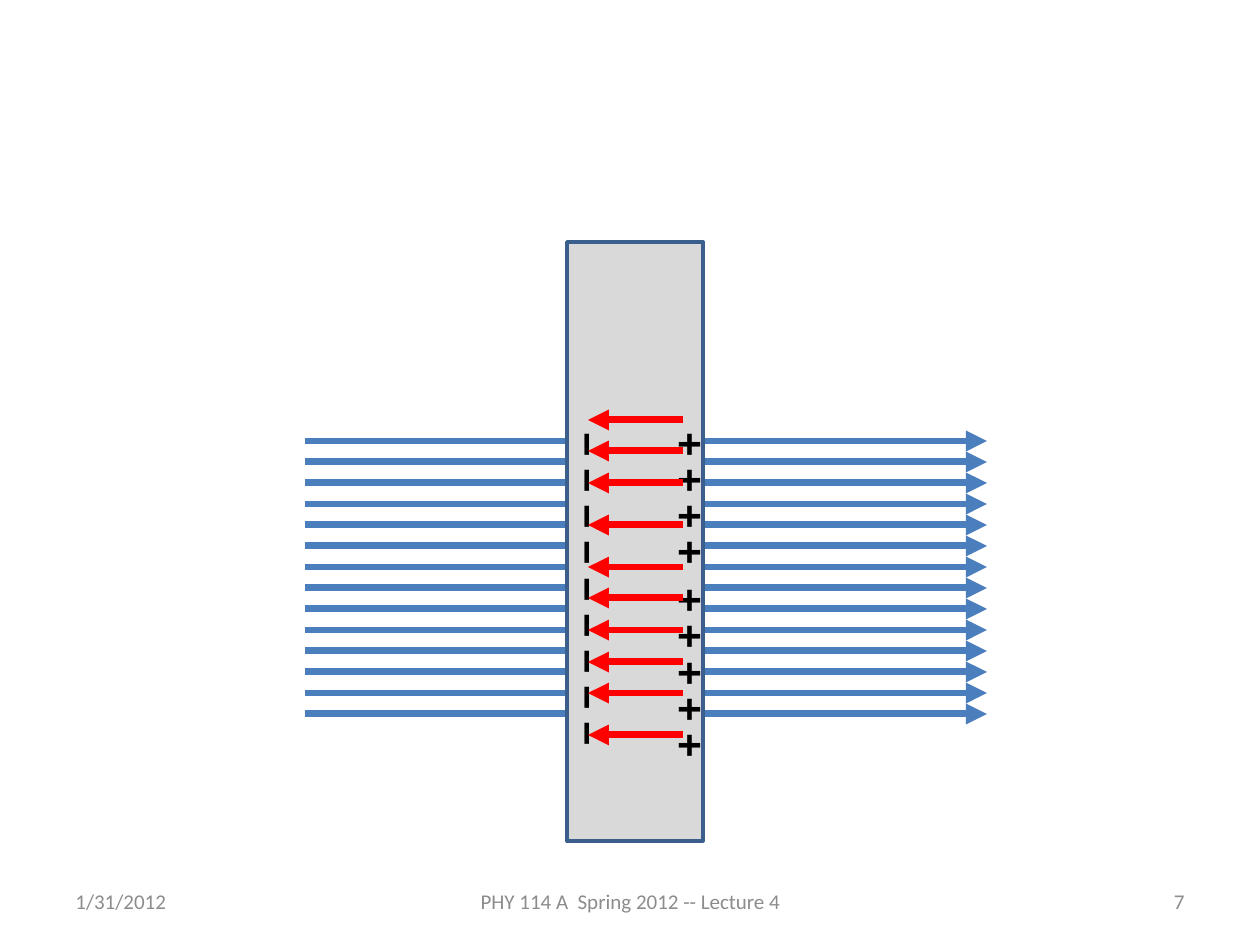
from lxml import etree
from pptx import Presentation
from pptx import util as u
from pptx.dml.color import RGBColor
from pptx.enum import shapes, text
from pptx.oxml.ns import qn

ALIGN = text.PP_ALIGN
FOOTERS = [  # wording, left, width, alignment
    ("1/31/2012", 63, 294, ALIGN.LEFT),
    ("PHY 114 A  Spring 2012 -- Lecture 4", 431, 399, ALIGN.CENTER),
    ("7", 903, 294, ALIGN.RIGHT),
]
FOOTER_TOP, FOOTER_HEIGHT = 876, 50
CHARGES = ["+ + + +  + + + + +", "− − − − − − − − −"]
CHARGES_BOX = (495, 420, 229, 368)
SLAB_BOX = (567, 242, 136, 599)

OUTER_LEFT, OUTER_RIGHT = 305, 987
OUTER_TOP, OUTER_STEP, OUTER_COUNT = 441, 21, 14
INNER_LEFT, INNER_RIGHT = 588, 683
INNER_YS = [420, 451, 483, 525, 567, 598, 630, 662, 693, 735]

BLUE = RGBColor(0x4B, 0x7E, 0xBC)
RED = RGBColor(0xFF, 0x00, 0x00)
SLAB_FILL = RGBColor(0xD9, 0xD9, 0xD9)
SLAB_EDGE = RGBColor(0x3A, 0x5F, 0x8C)
FOOTER_GREY = RGBColor(0x8C, 0x8C, 0x8C)
BLACK = RGBColor(0, 0, 0)


def px(*lengths):
    return [u.Emu(round(length * 914400 / 126)) for length in lengths]


def style(paragraph, name, size, color, bold=False):
    for run in paragraph.runs:
        run.font.name = name
        run.font.size = u.Pt(size)
        run.font.color.rgb = color
        run.font.bold = bold


def add_field_line(slide, start, end, y, color):
    """Draw a horizontal field line with its arrowhead at end."""
    line = slide.shapes.add_connector(
        shapes.MSO_CONNECTOR.STRAIGHT, *px(start, y, end, y))
    line.line.color.rgb = color
    line.line.width = u.Pt(4)
    properties = line._element.spPr
    etree.SubElement(properties.find(qn("a:ln")), qn("a:tailEnd"), type="triangle")
    etree.SubElement(properties, qn("a:effectLst"))


def add_footer(slide, wording, left, width, alignment):
    footer = slide.shapes.add_textbox(*px(left, FOOTER_TOP, width, FOOTER_HEIGHT))
    frame = footer.text_frame
    frame.word_wrap = True
    frame.vertical_anchor = text.MSO_ANCHOR.MIDDLE
    frame.text = wording
    frame.paragraphs[0].alignment = alignment
    style(frame.paragraphs[0], "Calibri", 12, FOOTER_GREY)


def add_slab(slide):
    slab = slide.shapes.add_shape(shapes.MSO_SHAPE.RECTANGLE, *px(*SLAB_BOX))
    slab.shadow.inherit = False
    slab.fill.solid()
    slab.fill.fore_color.rgb = SLAB_FILL
    slab.line.color.rgb = SLAB_EDGE
    slab.line.width = u.Pt(2)


def add_charges(slide):
    """Write the two charge columns as vertical text, right to left."""
    frame = slide.shapes.add_textbox(*px(*CHARGES_BOX)).text_frame
    frame.word_wrap = True
    frame._txBody.bodyPr.set("vert", "eaVert")
    frame.text = "\n".join(CHARGES)
    for paragraph in frame.paragraphs:
        style(paragraph, "Arial", 24, BLACK, bold=True)
    frame.paragraphs[1].space_before = u.Pt(30)


def main():
    deck = Presentation()
    deck.slide_width, deck.slide_height = px(1260, 945)
    slide = deck.slides.add_slide(deck.slide_layouts.get_by_name("Blank"))
    for footer in FOOTERS:
        add_footer(slide, *footer)
    for i in range(OUTER_COUNT):
        add_field_line(slide, OUTER_LEFT, OUTER_RIGHT, OUTER_TOP + i * OUTER_STEP, BLUE)
    add_slab(slide)
    add_charges(slide)
    for y in INNER_YS:
        add_field_line(slide, INNER_RIGHT, INNER_LEFT, y, RED)
    deck.save("out.pptx")


if __name__ == "__main__":
    main()
